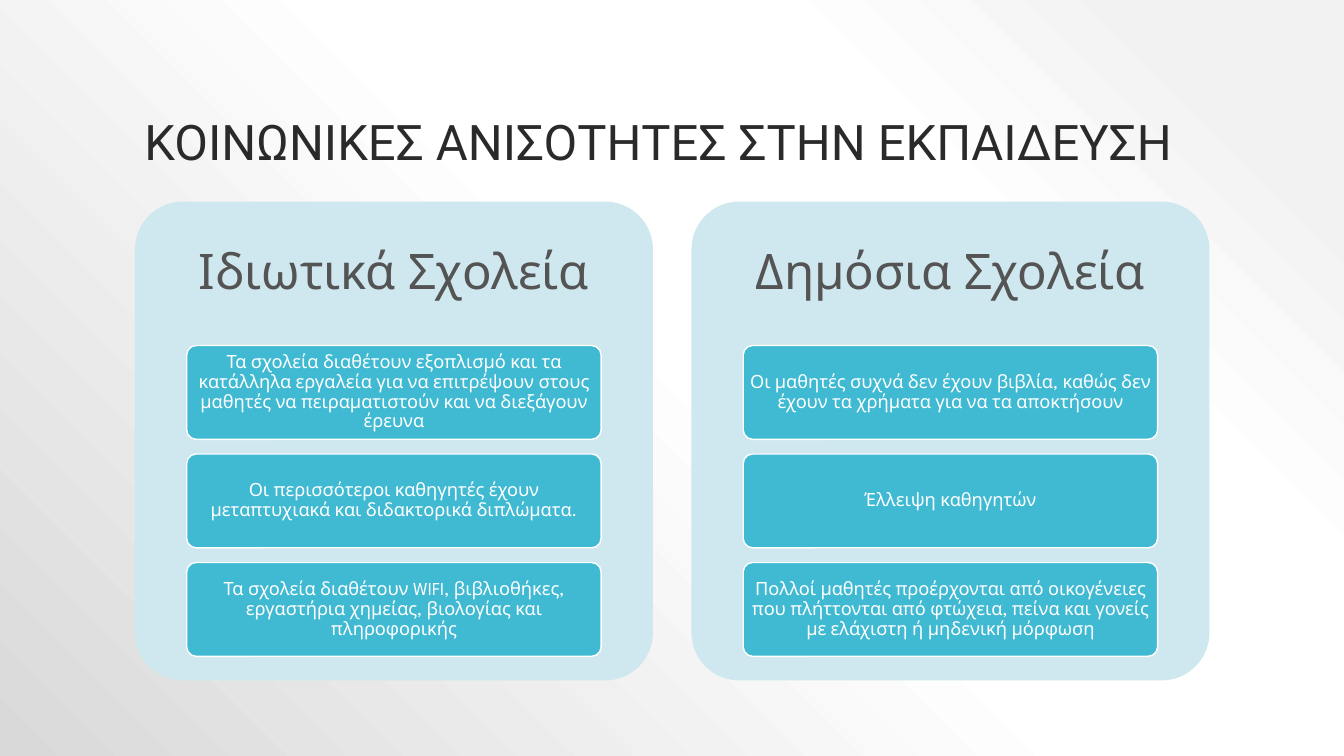
import pptx
import pptx.dml.color
import pptx.enum.shapes
import pptx.enum.text
import pptx.oxml
import pptx.oxml.ns
import pptx.util

Pt = pptx.util.Pt
ALIGN = pptx.enum.text.PP_ALIGN
ANCHOR = pptx.enum.text.MSO_ANCHOR

COLOURS = {
    "title": "2A2A2A",
    "heading": "545454",
    "panel": "CFE7EE",
    "card": "40BAD2",
    "white": "FFFFFF",
}
BACKGROUND_STOPS = [(10, "F2F2F2"), (28, "FFFFFF"), (48, "FFFFFF"), (100, "D9D9D9")]

TITLE = "ΚΟΙΝΩΝΙΚΕΣ ΑΝΙΣΟΤΗΤΕΣ ΣΤΗΝ ΕΚΠΑΙΔΕΥΣΗ"
SCHOOLS = {
    "Ιδιωτικά Σχολεία": [
        "Τα σχολεία διαθέτουν εξοπλισμό και τα κατάλληλα εργαλεία για να επιτρέψουν "
        "στους μαθητές να πειραματιστούν και να διεξάγουν έρευνα",
        "Οι περισσότεροι καθηγητές έχουν μεταπτυχιακά και διδακτορικά διπλώματα.",
        "Τα σχολεία διαθέτουν WIFI, βιβλιοθήκες, εργαστήρια χημείας, βιολογίας και "
        "πληροφορικής",
    ],
    "Δημόσια Σχολεία": [
        "Οι μαθητές συχνά δεν έχουν βιβλία, καθώς δεν έχουν τα χρήματα για να τα "
        "αποκτήσουν",
        "Έλλειψη καθηγητών",
        "Πολλοί μαθητές προέρχονται από οικογένειες που πλήττονται από φτώχεια, πείνα "
        "και γονείς με ελάχιστη ή μηδενική μόρφωση",
    ],
}

# Layout in points
PANEL_LEFT, PANEL_TOP, PANEL_WIDTH, PANEL_HEIGHT = 96.4, 144, 370, 342
PANEL_STEP = 397.5
HEADING_HEIGHT = 103
CARD_INSET, CARD_TOP, CARD_WIDTH, CARD_HEIGHT = 37, 246.8, 296, 67
CARD_STEP = 77.5


def colour(name):
    return pptx.dml.color.RGBColor.from_string(COLOURS[name])


class SlideBuilder:
    """Holds the text style and the current slide."""

    frame_format = {
        "word_wrap": True,
        "auto_size": pptx.enum.text.MSO_AUTO_SIZE.NONE,
        "vertical_anchor": ANCHOR.MIDDLE,
    }
    para_format = {"alignment": ALIGN.CENTER, "line_spacing": 0.9}

    def __init__(self, deck):
        self.page = deck.slides.add_slide(deck.slide_layouts[5])

    def background(self, stops):
        self.page.background.fill.gradient()
        marks = "".join(
            f'<a:gs pos="{place * 1000}"><a:srgbClr val="{value}"/></a:gs>'
            for place, value in stops
        )
        gradient = pptx.oxml.parse_xml(
            f'<a:gradFill rotWithShape="1" {pptx.oxml.ns.nsdecls("a")}>'
            f"<a:gsLst>{marks}</a:gsLst>"
            '<a:path path="circle"><a:fillToRect l="100000" b="100000"/></a:path>'
            "</a:gradFill>"
        )
        default = self.page.element.find(".//" + pptx.oxml.ns.qn("a:gradFill"))
        default.getparent().replace(default, gradient)

    def set_text(self, box, text, font, size, ink, margins, **changes):
        frame = box.text_frame
        frame.text = text
        para = frame.paragraphs[0]
        span = para.runs[0]
        across, down = map(Pt, margins)
        sides = {"margin_left": across, "margin_right": across,
                 "margin_top": down, "margin_bottom": down}
        letters = {"name": font, "size": Pt(size), "bold": False}
        for target, values in (
            (frame, {**self.frame_format, **sides}),
            (para, self.para_format),
            (span.font, letters),
        ):
            for key, value in values.items():
                setattr(target, key, changes.get(key, value))
        span.font.color.rgb = colour(ink)

    def title(self, text, left, top, width, height):
        box = self.page.shapes.title
        place = {"left": left, "top": top, "width": width, "height": height}
        for key, value in place.items():
            setattr(box, key, Pt(value))
        self.set_text(box, text, "Roboto", 35, "title", (7.2, 3.6),
                      alignment=ALIGN.LEFT, vertical_anchor=ANCHOR.BOTTOM)

    def rounded(self, fill, *place, line=None):
        box = self.page.shapes.add_shape(
            pptx.enum.shapes.MSO_SHAPE.ROUNDED_RECTANGLE, *map(Pt, place))
        box.adjustments[0] = 0.1
        box.shadow.inherit = False
        box.fill.solid()
        box.fill.fore_color.rgb = colour(fill)
        if line:
            box.line.color.rgb = colour(line)
            box.line.width = Pt(1)
        else:
            box.line.fill.background()
        return box

    def heading(self, text, *place):
        box = self.page.shapes.add_textbox(*map(Pt, place))
        self.set_text(box, text, "League Spartan", 35, "heading", (10.8, 10.8))

    def card(self, text, *place):
        box = self.rounded("card", *place, line="white")
        self.set_text(box, text, "League Spartan", 13, "white", (2.6, 2))


def main():
    deck = pptx.Presentation()
    deck.slide_width, deck.slide_height = Pt(960), Pt(540)
    slide = SlideBuilder(deck)
    slide.background(BACKGROUND_STOPS)
    slide.title(TITLE, 96, 21.6, 768, 104.4)

    # One panel for each kind of school
    for column, (name, points) in enumerate(SCHOOLS.items()):
        left = PANEL_LEFT + column * PANEL_STEP
        slide.rounded("panel", left, PANEL_TOP, PANEL_WIDTH, PANEL_HEIGHT)
        slide.heading(name, left, PANEL_TOP, PANEL_WIDTH, HEADING_HEIGHT)

        # Cards stacked at equal steps
        for row, point in enumerate(points):
            slide.card(point, left + CARD_INSET, CARD_TOP + row * CARD_STEP,
                       CARD_WIDTH, CARD_HEIGHT)

    deck.save("out.pptx")


if __name__ == "__main__":
    main()
